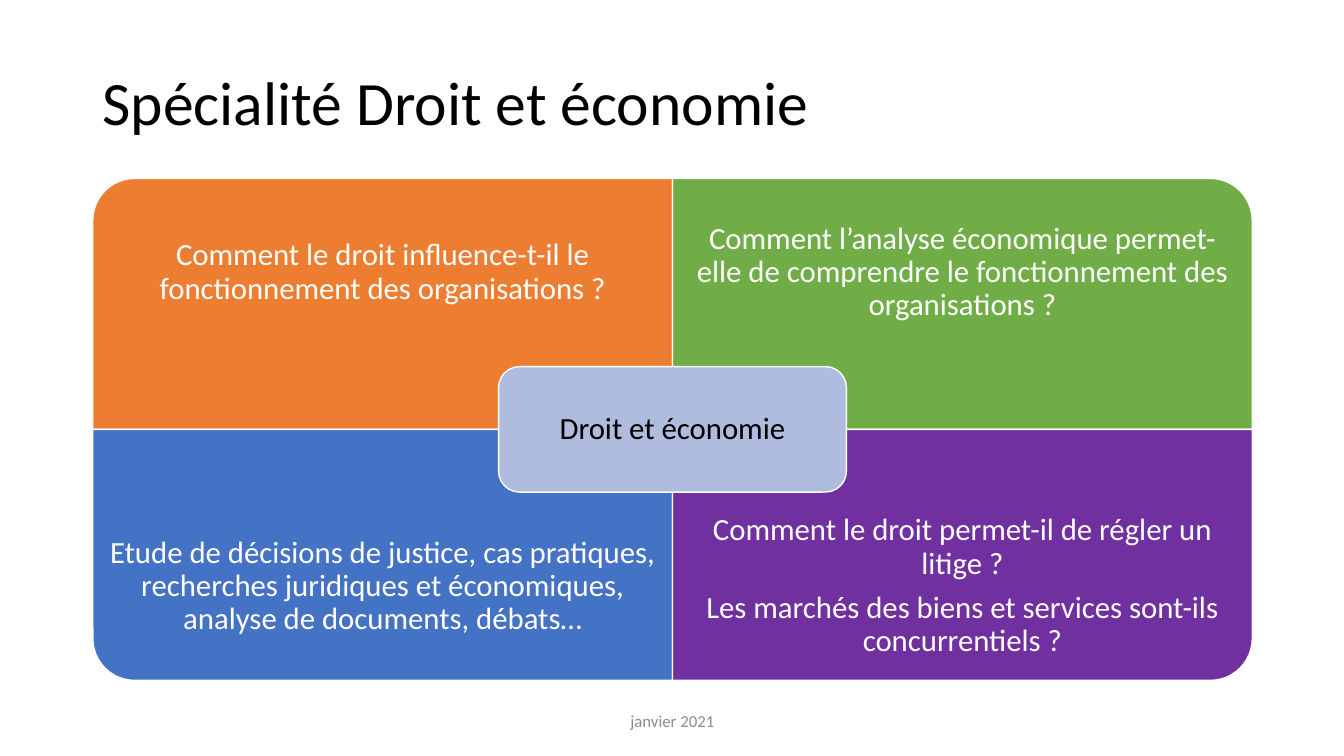
from pptx import Presentation
from pptx import util as u
from pptx.dml.color import RGBColor
from pptx.enum import shapes, text

FONT = "Calibri"
COLORS = {
    "white": "FFFFFF", "black": "000000", "gray": "8C8C8C",
    "orange": "ED7D31", "green": "70AD47", "blue": "4472C4",
    "purple": "7030A0", "pale": "B0BCDE",
}
CELLS = [
    ("orange", 270, ["Comment le droit influence-t-il le fonctionnement des organisations ?"]),
    ("green", 0, ["Comment l’analyse économique permet-elle de comprendre le "
                  "fonctionnement des organisations ?"]),
    ("blue", 180, ["Etude de décisions de justice, cas pratiques, recherches juridiques "
                   "et économiques, analyse de documents, débats…"]),
    ("purple", 90, ["Comment le droit permet-il de régler un litige ?",
                    "Les marchés des biens et services sont-ils concurrentiels ?"]),
]


def color(name):
    """Return the named colour."""
    return RGBColor.from_string(COLORS[name])


def write(slide, box, lines, size=22, ink="white", align="CENTER",
          pad=(0.17, 0.17), lead=0.9, after=7.7):
    """Add a text box with one paragraph per line."""
    frame = slide.shapes.add_textbox(*map(u.Inches, box)).text_frame
    frame.word_wrap = True
    frame.vertical_anchor = text.MSO_ANCHOR.MIDDLE
    frame.margin_left = frame.margin_right = u.Inches(pad[0])
    frame.margin_top = frame.margin_bottom = u.Inches(pad[1])
    for i, line in enumerate(lines):
        para = frame.add_paragraph() if i else frame.paragraphs[0]
        para.alignment = getattr(text.PP_ALIGN, align)
        para.line_spacing = lead
        para.space_after = u.Pt(after)
        run = para.add_run()
        run.text = line
        run.font.name = FONT
        run.font.size = u.Pt(size)
        run.font.color.rgb = color(ink)


def panel(slide, kind, box, fill, turn=0):
    """Add a filled, white-edged shape that covers the box once turned."""
    left, top, wide, high = box
    if turn % 180:
        left, top = left + (wide - high) / 2, top + (high - wide) / 2
        wide, high = high, wide
    shape = slide.shapes.add_shape(kind, *map(u.Inches, (left, top, wide, high)))
    shape.rotation = turn
    shape.shadow.inherit = False
    shape.fill.solid()
    shape.fill.fore_color.rgb = color(fill)
    shape.line.color.rgb = color("white")
    shape.line.width = u.Pt(1)


def matrix(slide, box, hub):
    """Fill the box with four quadrants and a central label."""
    left, top, wide, high = box
    wide, high = wide / 2, high / 2
    for i, (fill, turn, lines) in enumerate(CELLS):
        row, col = divmod(i, 2)
        x, y = left + col * wide, top + row * high
        panel(slide, shapes.MSO_SHAPE.ROUND_1_RECTANGLE, (x, y, wide, high), fill, turn)
        write(slide, (x, y + row * high / 4, wide, high * 0.75), lines)
    w, h = wide * 0.6, high / 2
    x, y = left + wide - w / 2, top + high - h / 2
    panel(slide, shapes.MSO_SHAPE.ROUNDED_RECTANGLE, (x, y, w, h), "pale")
    inset = 0.06
    write(slide, (x + inset, y + inset, w - 2 * inset, h - 2 * inset), [hub],
          ink="black", pad=(0.09, 0.09))


def main():
    """Build and save the slide."""
    deck = Presentation()
    deck.slide_width, deck.slide_height = u.Inches(13.33), u.Inches(7.5)
    slide = deck.slides.add_slide(deck.slide_layouts[6])
    write(slide, (0.92, 0.32, 11.5, 1.45), ["Spécialité Droit et économie"], size=44,
          ink="black", align="LEFT", pad=(0.1, 0.05), after=0)
    matrix(slide, (0.92, 1.77, 11.5, 4.98), "Droit et économie")
    write(slide, (4.42, 6.95, 4.5, 0.4), ["janvier 2021"], size=12, ink="gray",
          pad=(0.1, 0.05), lead=1.0, after=0)
    deck.save("out.pptx")


if __name__ == "__main__":
    main()
